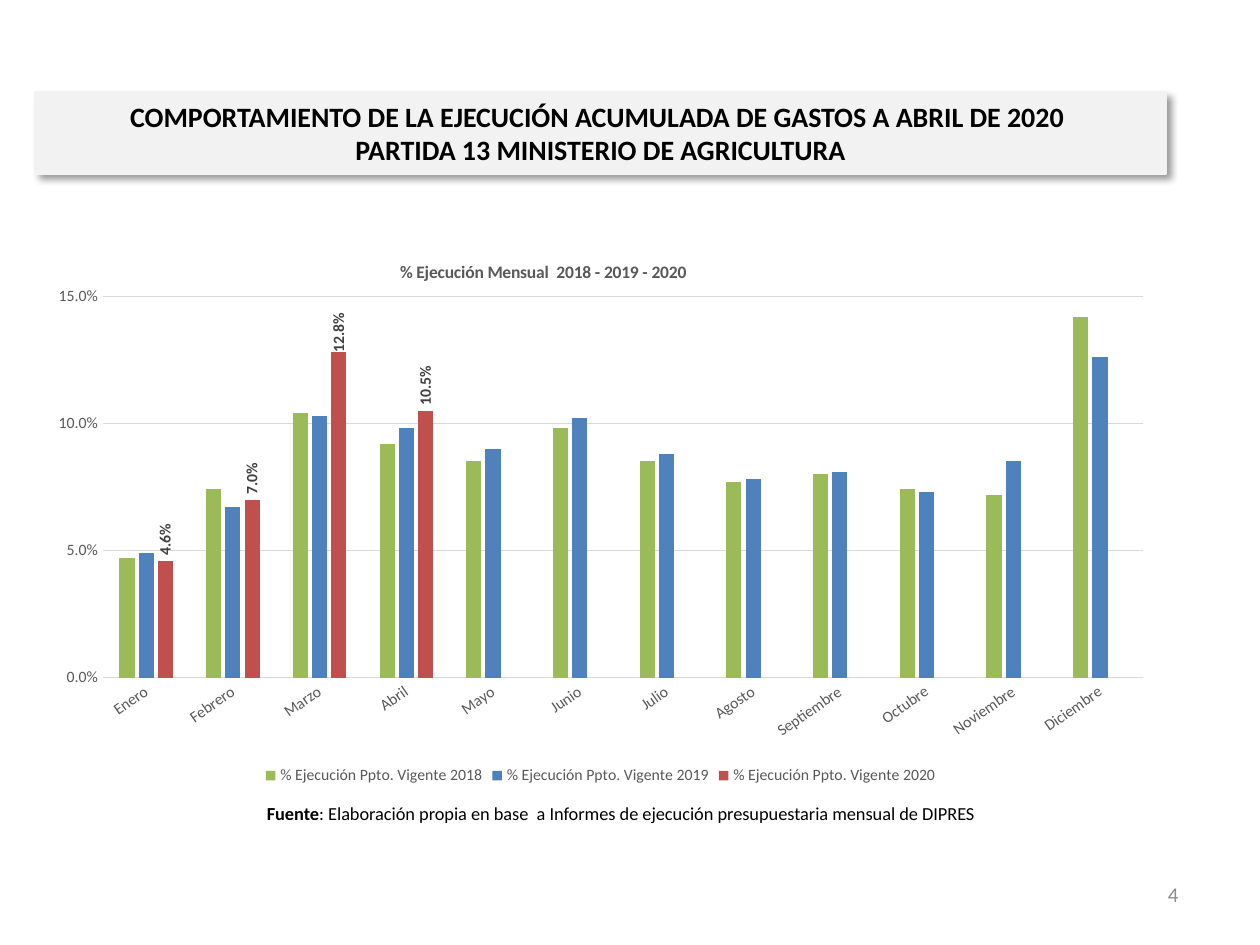
"""Build a slide on the monthly budget execution of a ministry."""
from dataclasses import dataclass
from typing import Any

import pptx
import pptx.chart.data
import pptx.dml.color
import pptx.enum.chart
import pptx.enum.text
import pptx.oxml
import pptx.oxml.ns
import pptx.util

ALIGN = pptx.enum.text.PP_ALIGN
CHART = pptx.enum.chart
PX = 914400 / 126


@dataclass(frozen=True)
class Theme:
    face: str = "Calibri"
    ink: str = "000000"
    gray: str = "595959"
    dark: str = "404040"
    pale: str = "8C8C8C"
    grid: str = "D9D9D9"
    panel: str = "F2F2F2"
    head: float = 16
    page: float = 12
    note: float = 10.5
    label: float = 10
    small: float = 9


@dataclass(frozen=True)
class Box:
    left: int
    top: int
    width: int
    height: int

    def emu(self) -> list[int]:
        return [round(n * PX) for n in (self.left, self.top, self.width, self.height)]


@dataclass(frozen=True)
class Run:
    text: str
    size: float
    color: str
    bold: bool = False


@dataclass(frozen=True)
class Year:
    name: str
    color: str
    vals: tuple[float, ...]


THEME = Theme()
MONTHS = ("Enero", "Febrero", "Marzo", "Abril", "Mayo", "Junio", "Julio", "Agosto",
          "Septiembre", "Octubre", "Noviembre", "Diciembre")
YEARS = (
    Year("2018", "9BBB59", (0.047, 0.074, 0.104, 0.092, 0.085, 0.098,
                            0.085, 0.077, 0.08, 0.074, 0.072, 0.142)),
    Year("2019", "4F81BD", (0.049, 0.067, 0.103, 0.098, 0.09, 0.102,
                            0.088, 0.078, 0.081, 0.073, 0.085, 0.126)),
    Year("2020", "C0504D", (0.046, 0.07, 0.128, 0.105)),
)


def apply(item: Any, vals: dict[str, Any]) -> None:
    for key, val in vals.items():
        setattr(item, key, val)


def rgb(code: str) -> pptx.dml.color.RGBColor:
    return pptx.dml.color.RGBColor.from_string(code)


def style(font: Any, size: float, color: str, bold: bool = False) -> None:
    apply(font, {"name": THEME.face, "size": pptx.util.Pt(size), "bold": bold})
    font.color.rgb = rgb(color)


def stroke(line: Any, color: str) -> None:
    line.color.rgb = rgb(color)
    line.width = pptx.util.Pt(0.75)


def write(shape: Any, box: Box, align: Any, runs: list[Run]) -> None:
    apply(shape, dict(zip(("left", "top", "width", "height"), box.emu())))
    frame = shape.text_frame
    apply(frame, {"word_wrap": True, "auto_size": pptx.enum.text.MSO_AUTO_SIZE.NONE,
                  "vertical_anchor": pptx.enum.text.MSO_ANCHOR.MIDDLE})
    para = frame.paragraphs[0]
    para.alignment = align
    for run in runs:
        for i, text in enumerate(run.text.split("\n")):
            if i:
                para.add_line_break()
            part = para.add_run()
            part.text = text
            style(part.font, run.size, run.color, run.bold)


def label(slide: Any, box: Box, align: Any, runs: list[Run]) -> None:
    write(slide.shapes.add_textbox(*box.emu()), box, align, runs)


def shade(shape: Any) -> None:
    space = pptx.oxml.ns.nsdecls("a")
    shape.fill.solid()
    shape.fill.fore_color.rgb = rgb(THEME.panel)
    stroke(shape.line, THEME.panel)
    shape.element.spPr.append(pptx.oxml.parse_xml(
        f'<a:effectLst {space}><a:outerShdw blurRad="50800" dist="38100" dir="2700000" '
        'algn="tl" rotWithShape="0"><a:srgbClr val="000000"><a:alpha val="40000"/>'
        '</a:srgbClr></a:outerShdw></a:effectLst>'))


def place(item: Any, spot: dict[str, float], mode: str = "", target: str = "") -> None:
    """Put a manual layout into a chart element."""
    kind = f'<c:layoutTarget val="{target}"/>' if target else ""
    edges = "".join(f'<c:{k}Mode val="{mode}"/>' for k in "xy") if mode else ""
    sizes = "".join(f'<c:{k} val="{v}"/>' for k, v in spot.items())
    node = pptx.oxml.parse_xml(
        f'<c:layout {pptx.oxml.ns.nsdecls("c")}><c:manualLayout>{kind}{edges}{sizes}'
        '</c:manualLayout></c:layout>')
    for old in item.xpath("c:layout"):
        item.remove(old)
    first = item.xpath("c:idx | c:tx")
    if first:
        first[0].addnext(node)
    else:
        item.insert(0, node)


def turn(item: Any, angle: int) -> None:
    for body in item.xpath("c:txPr/a:bodyPr"):
        apply_rot = {"rot": str(angle * 60000), "vert": "horz"}
        for key, val in apply_rot.items():
            body.set(key, val)


def axes(chart: Any) -> None:
    cat, val = chart.category_axis, chart.value_axis
    none = CHART.XL_TICK_MARK.NONE
    for axis in (cat, val):
        apply(axis, {"major_tick_mark": none, "minor_tick_mark": none})
        style(axis.tick_labels.font, THEME.small, THEME.gray)
    stroke(cat.format.line, THEME.grid)
    turn(cat._element, -35)
    apply(val, {"minimum_scale": 0, "maximum_scale": 0.15, "major_unit": 0.05})
    apply(val.tick_labels, {"number_format": "0.0%", "number_format_is_linked": False})
    val.format.line.fill.background()
    stroke(val.major_gridlines.format.line, THEME.grid)


def tags(serie: Any) -> None:
    """Show upright values above the bars, with the one for March moved down."""
    group = serie.data_labels
    apply(group, {"show_value": True, "number_format": "0.0%",
                  "number_format_is_linked": False})
    march = serie.points[2].data_label
    for item in (group, march):
        style(item.font, THEME.small, THEME.dark, True)
        item.position = CHART.XL_LABEL_POSITION.OUTSIDE_END
    turn(group._element, -90)
    for node in group._element.xpath("c:dLbl"):
        turn(node, -90)
        place(node, {"x": 0, "y": 0.01})


def graph(slide: Any, box: Box) -> None:
    data = pptx.chart.data.CategoryChartData(number_format="0.0%")
    data.categories = MONTHS
    for year in YEARS:
        gap = [None] * (len(MONTHS) - len(year.vals))
        data.add_series(f"% Ejecución Ppto. Vigente {year.name}", [*year.vals, *gap])
    chart = slide.shapes.add_chart(
        CHART.XL_CHART_TYPE.COLUMN_CLUSTERED, *box.emu(), data).chart
    style(chart.font, THEME.label, THEME.ink)
    title = chart.chart_title
    title.text_frame.text = "% Ejecución Mensual  2018 - 2019 - 2020"
    style(title.text_frame.paragraphs[0].runs[0].font, THEME.label, THEME.gray, True)
    title.include_in_layout = False
    place(title._element, {"x": 0.32, "y": 0.05}, "edge")
    plot = chart.plots[0]
    apply(plot, {"gap_width": 219, "overlap": -27, "vary_by_categories": False})
    for serie, year in zip(plot.series, YEARS):
        serie.format.fill.solid()
        serie.format.fill.fore_color.rgb = rgb(year.color)
    tags(plot.series[2])
    axes(chart)
    area = chart._chartSpace.xpath("c:chart/c:plotArea")[0]
    place(area, {"x": 0.06, "y": 0.12, "w": 0.92, "h": 0.68}, "edge", "inner")
    chart.has_legend = True
    apply(chart.legend, {"position": CHART.XL_LEGEND_POSITION.BOTTOM,
                         "include_in_layout": False})
    style(chart.legend.font, THEME.small, THEME.gray)


def main() -> None:
    deck = pptx.Presentation()
    apply(deck, {"slide_width": round(1260 * PX), "slide_height": round(945 * PX)})
    slide = deck.slides.add_slide(deck.slide_layouts[5])
    title = slide.shapes.title
    shade(title)
    head = ("COMPORTAMIENTO DE LA EJECUCIÓN ACUMULADA DE GASTOS A ABRIL DE 2020 \n"
            "PARTIDA 13 MINISTERIO DE AGRICULTURA")
    write(title, Box(35, 92, 1131, 82), ALIGN.CENTER,
          [Run(head, THEME.head, THEME.ink, True)])
    graph(slide, Box(35, 229, 1131, 561))
    note = ": Elaboración propia en base  a Informes de ejecución presupuestaria mensual de DIPRES"
    label(slide, Box(120, 791, 1002, 45), ALIGN.CENTER,
          [Run("Fuente", THEME.note, THEME.ink, True), Run(note, THEME.note, THEME.ink)])
    label(slide, Box(897, 869, 294, 50), ALIGN.RIGHT, [Run("4", THEME.page, THEME.pale)])
    deck.save("out.pptx")


if __name__ == "__main__":
    main()
